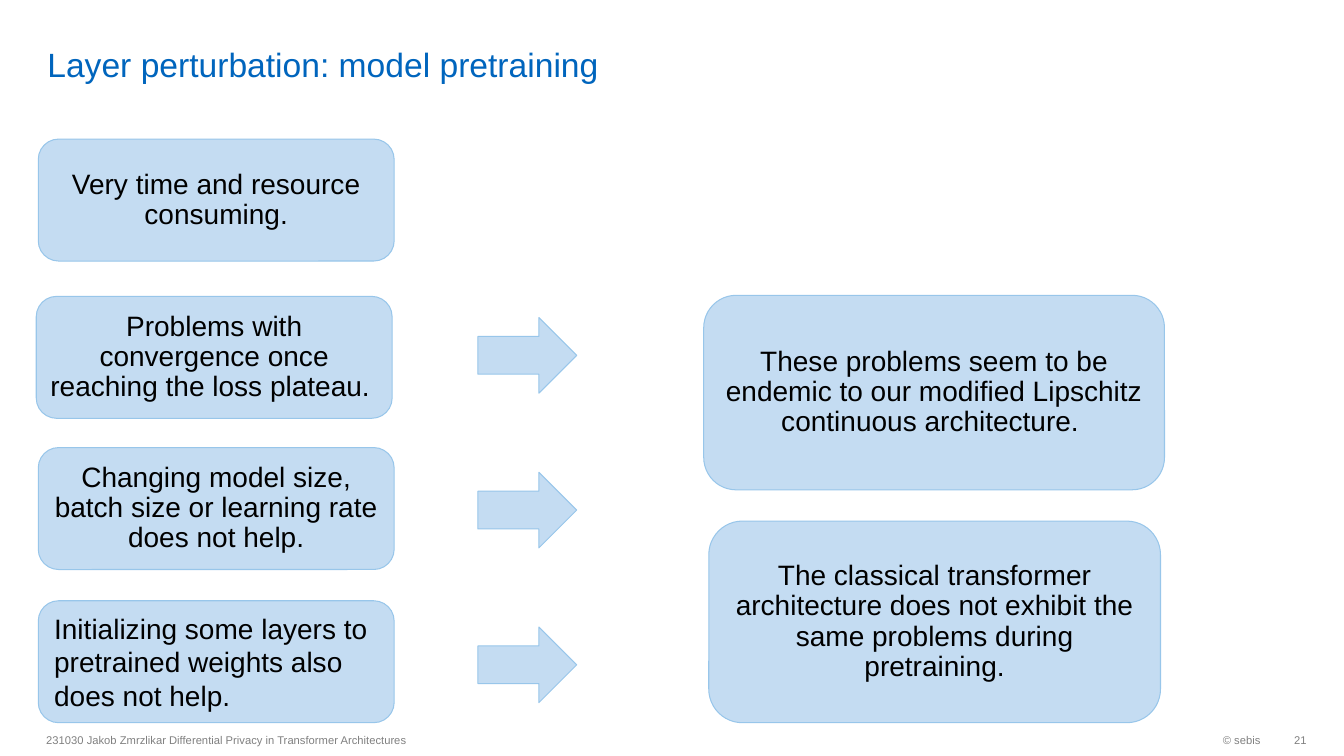
from pptx import Presentation
from pptx.dml.color import RGBColor
from pptx.enum.shapes import MSO_SHAPE
from pptx.enum.text import MSO_ANCHOR, PP_ALIGN
from pptx.util import Inches, Pt

COLORS = {
    "title": "0065BD",
    "footer": "808080",
    "text": "000000",
    "fill": "C4DCF2",
    "line": "98C6EA",
}
FONT = "Arial"
SLIDE_WIDTH, SLIDE_HEIGHT = 13.33, 7.5
CARD_HEIGHT = 1.21

# Left offset and top within the column, text
PROBLEMS = [
    (0.02, 0, "Very time and resource consuming."),
    (0, 1.56, "Problems with convergence once reaching the loss plateau. "),
    (0.02, 3.06, "Changing model size, batch size or learning rate does not help."),
]
INITIALIZATION = (0.02, 4.58,
                  "Initializing some layers to pretrained weights also does not help.")
# Box within the column, text
CONCLUSIONS = [
    ((0, 0, 4.57, 1.93),
     "These problems seem to be endemic to our modified Lipschitz continuous architecture. "),
    ((0.05, 2.24, 4.48, 2),
     "The classical transformer architecture does not exhibit the same problems "
     "during pretraining."),
]


def color(name):
    return RGBColor.from_string(COLORS[name])


def write_text(shape, text, size=20, color_name="text", align=PP_ALIGN.LEFT,
               anchor=MSO_ANCHOR.MIDDLE, margins=(0.1, 0.05, 0.1, 0.05), spacing=1.0):
    """Fill a shape with one paragraph; margins are left, top, right, bottom in inches."""
    frame = shape.text_frame
    frame.word_wrap = True
    frame.vertical_anchor = anchor
    (frame.margin_left, frame.margin_top,
     frame.margin_right, frame.margin_bottom) = map(Inches, margins)
    paragraph = frame.paragraphs[0]
    paragraph.alignment = align
    paragraph.line_spacing = spacing
    run = paragraph.add_run()
    run.text = text
    run.font.name = FONT
    run.font.size = Pt(size)
    run.font.color.rgb = color(color_name)


def add_block(slide, kind, box):
    shape = slide.shapes.add_shape(kind, *map(Inches, box))
    shape.shadow.inherit = False
    shape.fill.solid()
    shape.fill.fore_color.rgb = color("fill")
    shape.line.color.rgb = color("line")
    shape.line.width = Pt(0.75)
    return shape


def add_card(slide, box, text):
    card = add_block(slide, MSO_SHAPE.ROUNDED_RECTANGLE, box)
    write_text(card, text, align=PP_ALIGN.CENTER,
               margins=(0.06, 0.09, 0.06, 0.09), spacing=0.9)


def add_title(slide, box):
    title = slide.shapes.title
    title.left, title.top, title.width, title.height = map(Inches, box)
    write_text(title, "Layer perturbation: model pretraining", size=24,
               color_name="title", anchor=MSO_ANCHOR.BOTTOM, margins=(0.1, 0, 0.1, 0))


def add_problems(slide, box):
    left, top, width, _ = box
    for offset, down, text in PROBLEMS:
        add_card(slide, (left + offset, top + down, width, CARD_HEIGHT), text)
    offset, down, text = INITIALIZATION
    card = add_block(slide, MSO_SHAPE.ROUNDED_RECTANGLE,
                     (left + offset, top + down, width, CARD_HEIGHT))
    write_text(card, text)


def add_arrows(slide, box, count=3, arrow_height=0.75):
    left, top, width, height = box
    pitch = (height - arrow_height) / (count - 1)
    for index in range(count):
        add_block(slide, MSO_SHAPE.RIGHT_ARROW,
                  (left, top + index * pitch, width, arrow_height))


def add_conclusions(slide, box):
    left, top, _, _ = box
    for (offset, down, width, height), text in CONCLUSIONS:
        add_card(slide, (left + offset, top + down, width, height), text)


def add_footer(slide, box):
    left, top, width, height = box
    right = left + width
    parts = [
        (left, 6.3, "231030 Jakob Zmrzlikar Differential Privacy in Transformer Architectures",
         PP_ALIGN.LEFT, 0.1),
        (right - 2.7, 2.34, "© sebis", PP_ALIGN.RIGHT, 0.1),
        (right - 0.36, 0.36, "21", PP_ALIGN.RIGHT, 0),
    ]
    for part_left, part_width, text, align, right_margin in parts:
        text_box = slide.shapes.add_textbox(
            *map(Inches, (part_left, top, part_width, height)))
        write_text(text_box, text, size=8, color_name="footer", align=align,
                   margins=(0.1, 0.05, right_margin, 0.05))


def main():
    presentation = Presentation()
    presentation.slide_width = Inches(SLIDE_WIDTH)
    presentation.slide_height = Inches(SLIDE_HEIGHT)
    slide = presentation.slides.add_slide(presentation.slide_layouts.get_by_name("Title Only"))
    add_title(slide, (0.37, 0.05, 11.58, 0.79))
    add_problems(slide, (0.36, 1.38, 3.53, 5.79))
    add_arrows(slide, (4.74, 3.15, 0.98, 3.82))
    add_conclusions(slide, (6.98, 2.93, 4.57, 4.24))
    add_footer(slide, (0.36, 7.18, 12.6, 0.32))
    presentation.save("out.pptx")


if __name__ == "__main__":
    main()
